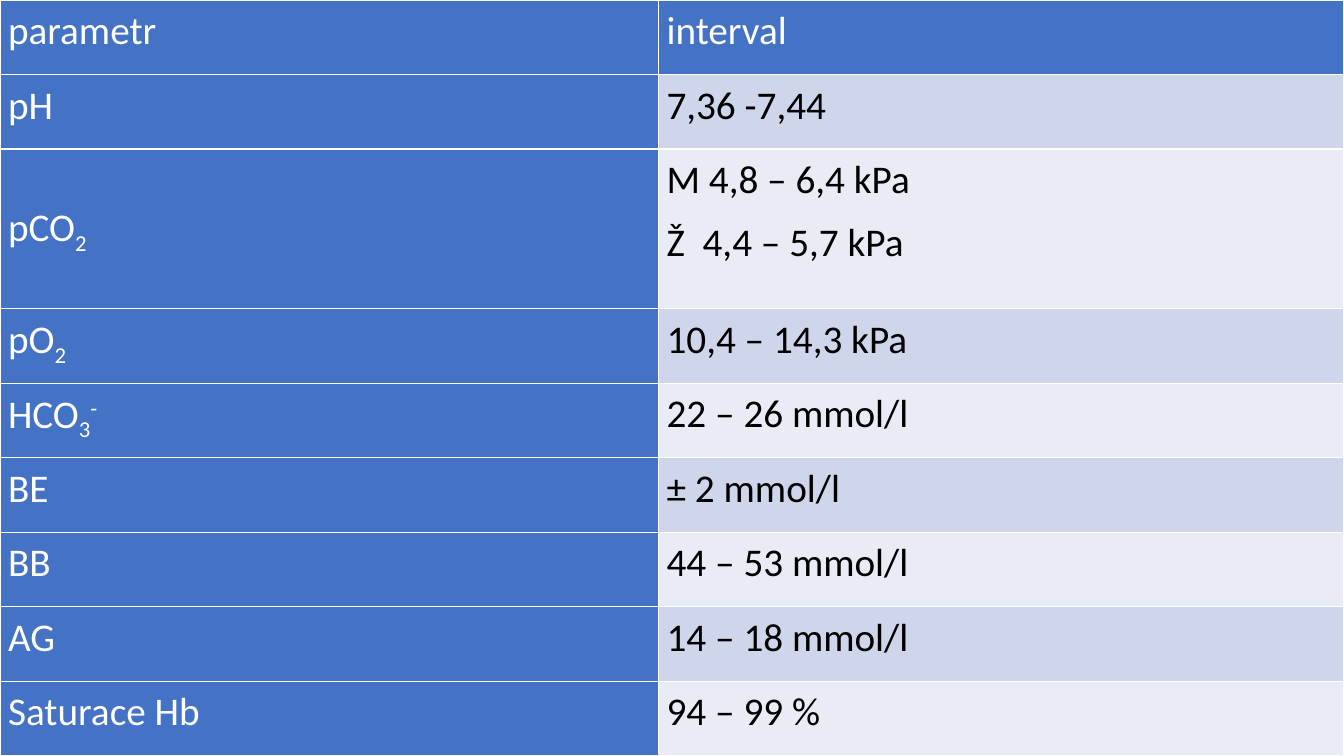
from dataclasses import dataclass

from lxml import etree
from pptx import Presentation
from pptx.dml.color import RGBColor
from pptx.enum.text import MSO_ANCHOR
from pptx.oxml.ns import qn
from pptx.table import _Cell
from pptx.util import Inches, Pt

TOP = MSO_ANCHOR.TOP
MIDDLE = MSO_ANCHOR.MIDDLE
WHITE = RGBColor(0xFF, 0xFF, 0xFF)
BLACK = RGBColor(0x00, 0x00, 0x00)
BLUE = RGBColor(0x44, 0x72, 0xC4)
DARK = RGBColor(0xCF, 0xD5, 0xEA)
LIGHT = RGBColor(0xE9, 0xEB, 0xF5)

WIDTH = Inches(13.33)
HEIGHT = Inches(7.5)
COLS = (0.49, 0.51)
FONT = "Calibri"
SIZE = Pt(28)
SUB = -25000
SUPER = 30000


@dataclass(frozen=True)
class Entry:
    name: str
    range: str
    sub: str = ""
    power: str = ""
    share: float = 1
    anchor: MSO_ANCHOR = TOP


ENTRIES = (
    Entry("parametr", "interval"),
    Entry("pH", "7,36 -7,44"),
    Entry("pCO", "M 4,8 – 6,4 kPa\nŽ  4,4 – 5,7 kPa", sub="2", share=2.14, anchor=MIDDLE),
    Entry("pO", "10,4 – 14,3 kPa", sub="2"),
    Entry("HCO", "22 – 26 mmol/l", sub="3", power="-"),
    Entry("BE", "± 2 mmol/l"),
    Entry("BB", "44 – 53 mmol/l"),
    Entry("AG", "14 – 18 mmol/l"),
    Entry("Saturace Hb", "94 – 99 %"),
)


def border(cell: _Cell) -> None:
    props = cell._tc.get_or_add_tcPr()
    for side in ("a:lnL", "a:lnR", "a:lnT", "a:lnB"):
        line = etree.SubElement(props, qn(side), w=str(Pt(1)))
        fill = etree.SubElement(line, qn("a:solidFill"))
        etree.SubElement(fill, qn("a:srgbClr"), val=str(WHITE))


def shift(cell: _Cell, text: str, base: int) -> None:
    if text:
        run = cell.text_frame.paragraphs[0].add_run()
        run.text = text
        run.font._element.set("baseline", str(base))


def style(cell: _Cell, fill: RGBColor, ink: RGBColor) -> None:
    border(cell)
    cell.fill.solid()
    cell.fill.fore_color.rgb = fill
    cell.margin_left = cell.margin_right = Inches(0.08)
    cell.margin_top = cell.margin_bottom = Inches(0.04)
    for para in cell.text_frame.paragraphs:
        para.line_spacing = 1.07
        para.space_after = Pt(8)
        for run in para.runs:
            run.font.name = FONT
            run.font.size = SIZE
            run.font.bold = False
            run.font.color.rgb = ink


def main() -> None:
    deck = Presentation()
    deck.slide_width = WIDTH
    deck.slide_height = HEIGHT
    slide = deck.slides.add_slide(deck.slide_layouts[6])
    table = slide.shapes.add_table(len(ENTRIES), len(COLS), 0, 0, WIDTH, HEIGHT).table
    table.horz_banding = False
    for column, share in zip(table.columns, COLS):
        column.width = int(WIDTH * share)
    unit = HEIGHT / sum(entry.share for entry in ENTRIES)
    for index, entry in enumerate(ENTRIES):
        table.rows[index].height = int(unit * entry.share)
        name, limit = table.cell(index, 0), table.cell(index, 1)
        name.text_frame.text = entry.name
        shift(name, entry.sub, SUB)
        shift(name, entry.power, SUPER)
        name.vertical_anchor = entry.anchor
        limit.text_frame.text = entry.range
        style(name, BLUE, WHITE)
        if index == 0:
            style(limit, BLUE, WHITE)
        else:
            style(limit, DARK if index % 2 else LIGHT, BLACK)
    deck.save("out.pptx")


if __name__ == "__main__":
    main()
